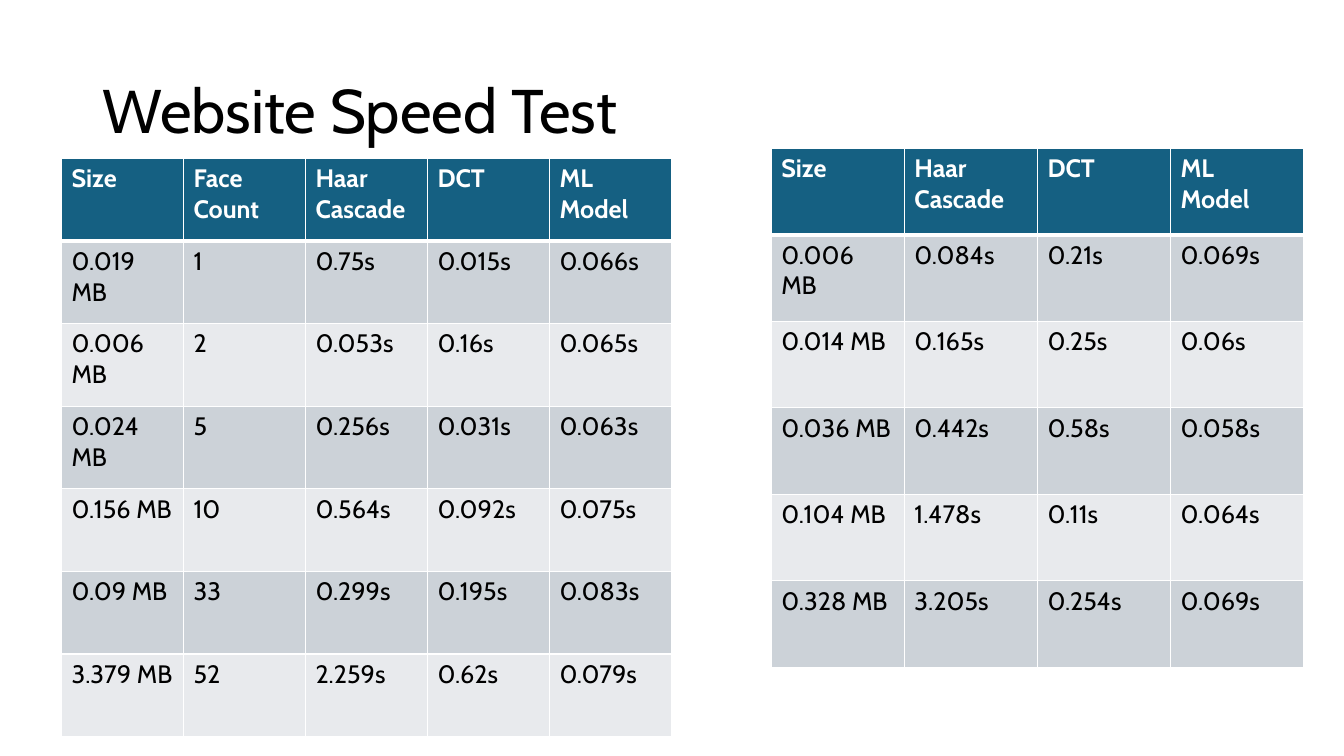
"""Build the website speed test slide with its two timing tables."""
from dataclasses import dataclass

from lxml.etree import SubElement as Sub
from pptx import Presentation
from pptx.dml.color import RGBColor as Rgb
from pptx.enum.text import MSO_ANCHOR as Anchor
from pptx.oxml.ns import qn
from pptx.util import Inches, Pt


@dataclass(frozen=True)
class Theme:
    face: str = "Cabin"
    head: str = "156082"
    odd: str = "CCD2D8"
    even: str = "E8EAED"
    white: str = "FFFFFF"
    black: str = "000000"
    title: int = 44
    body: int = 18
    thin: int = 1
    thick: int = 3


theme = Theme()


def style(para, size, color, bold=False):
    for run in para.runs:
        font = run.font
        font.name = theme.face
        font.size = Pt(size)
        font.bold = bold
        font.color.rgb = Rgb.from_string(color)


def border(cell, side, width):
    line = Sub(cell._tc.get_or_add_tcPr(), qn(f"a:ln{side}"), w=str(Pt(width)))
    fill = Sub(line, qn("a:solidFill"))
    Sub(fill, qn("a:srgbClr"), val=theme.white)


deck = Presentation()
deck.slide_width = Inches(13.33)
deck.slide_height = Inches(7.5)
slide = deck.slides.add_slide(deck.slide_layouts[6])

title = slide.shapes.add_textbox(Inches(0.92), Inches(0.4), Inches(11.5), Inches(1.45))
frame = title.text_frame
frame.word_wrap = True
frame.vertical_anchor = Anchor.MIDDLE
frame.text = "Website Speed Test"
frame.paragraphs[0].line_spacing = 0.9
style(frame.paragraphs[0], theme.title, theme.black)

sizes = [
    ["Size", "Haar\nCascade", "DCT", "ML\vModel"],
    ["0.006 MB", "0.084s", "0.21s", "0.069s"],
    ["0.014 MB", "0.165s", "0.25s", "0.06s"],
    ["0.036 MB", "0.442s", "0.58s", "0.058s"],
    ["0.104 MB", "1.478s", "0.11s", "0.064s"],
    ["0.328 MB", "3.205s", "0.254s", "0.069s"],
]
faces = [
    ["Size", "Face Count", "Haar\vCascade", "DCT", "ML\vModel"],
    ["0.019 MB", "1", "0.75s", "0.015s", "0.066s"],
    ["0.006 MB", "2", "0.053s", "0.16s", "0.065s"],
    ["0.024 MB", "5", "0.256s", "0.031s", "0.063s"],
    ["0.156 MB", "10", "0.564s", "0.092s", "0.075s"],
    ["0.09 MB", "33", "0.299s", "0.195s", "0.083s"],
    ["3.379 MB", "52", "2.259s", "0.62s", "0.079s"],
]

for data, left, top, width, height in [
    (sizes, 7.65, 1.47, 5.28, 5.15),
    (faces, 0.61, 1.57, 6.05, 5.74),
]:
    table = slide.shapes.add_table(
        len(data), len(data[0]), Inches(left), Inches(top), Inches(width), Inches(height)
    ).table
    for r, row in enumerate(data):
        head = r == 0
        fill = theme.head if head else theme.odd if r % 2 else theme.even
        for c, text in enumerate(row):
            cell = table.cell(r, c)
            cell.text_frame.text = text
            for para in cell.text_frame.paragraphs:
                style(para, theme.body, theme.white if head else theme.black, head)
            for side in "LRB" if r == 1 else "LRTB":
                border(cell, side, theme.thick if head and side == "B" else theme.thin)
            cell.fill.solid()
            cell.fill.fore_color.rgb = Rgb.from_string(fill)

deck.save("out.pptx")
